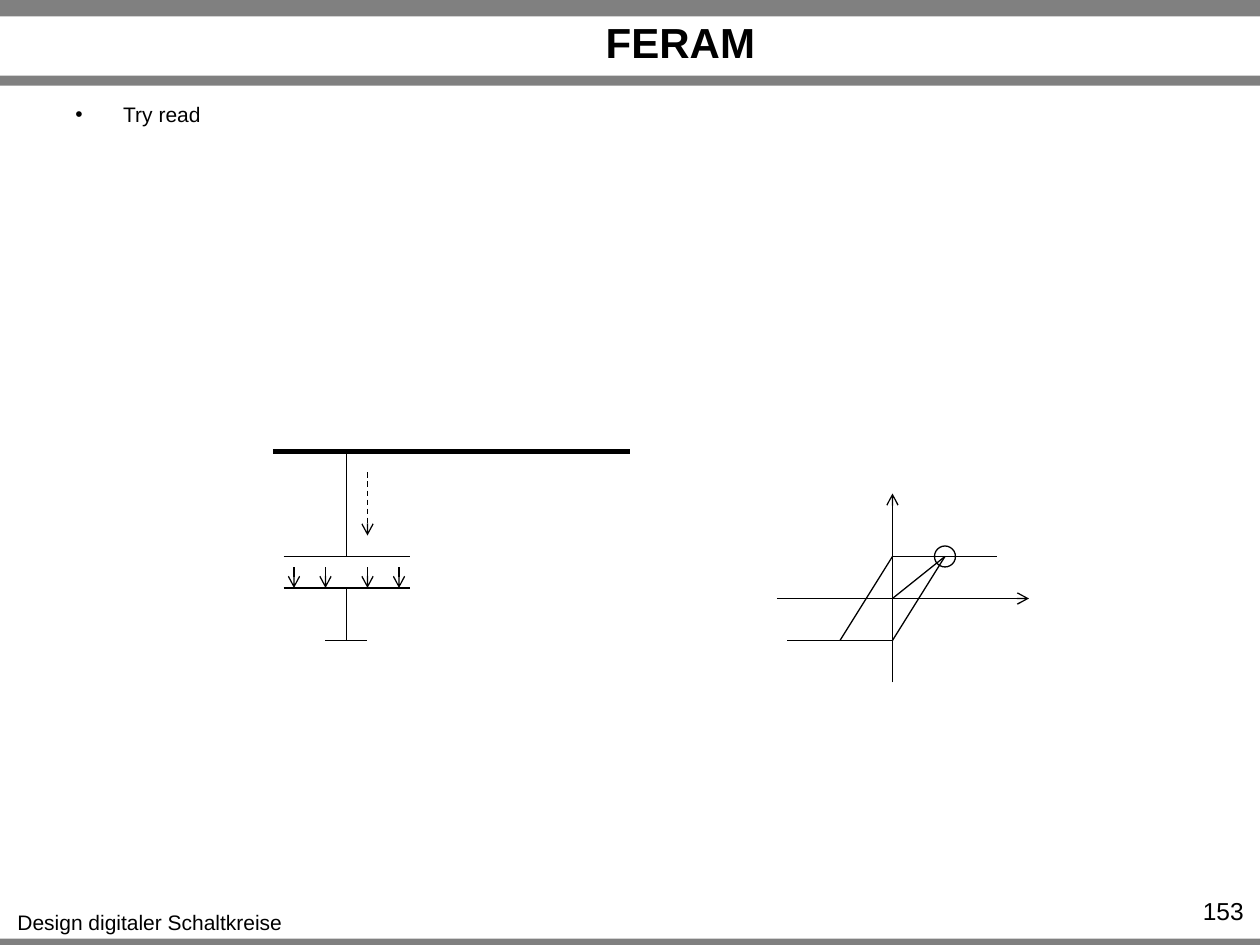
from lxml import etree
from pptx import Presentation
from pptx import util as u
from pptx.dml.color import RGBColor
from pptx.enum import dml, shapes, text
from pptx.oxml.ns import qn

COLORS = {"ink": "000000", "band": "808080"}
WIDTH, HEIGHT = 10, 7.5
CELL = 1 / 12  # grid step of both diagrams, in inches


def rgb(name):
    return RGBColor.from_string(COLORS[name])


def inches(*values):
    return [u.Inches(v) for v in values]


def write(sp, words, size, align, **font):
    """Fill a text shape with one formatted paragraph and return the paragraph."""
    p = sp.text_frame.paragraphs[0]
    p.alignment = align
    r = p.add_run()
    r.text = words
    r.font.color.rgb = rgb("ink")
    for name, value in {"name": "Arial", "size": u.Pt(size), **font}.items():
        setattr(r.font, name, value)
    return p


def add_text(s, box, words, size, align, wrap=True):
    sp = s.shapes.add_textbox(*inches(*box))
    sp.text_frame.word_wrap = wrap
    return write(sp, words, size, align)


def add_line(s, box, start, end, width=0.75, arrow=False, dashed=False):
    """Draw a line between two grid points counted from the box's corner."""
    left, top = box
    ends = [edge + n * CELL for point in (start, end) for edge, n in zip(box, point)]
    line = s.shapes.add_connector(shapes.MSO_CONNECTOR.STRAIGHT, *inches(*ends))
    line.line.color.rgb = rgb("ink")
    line.line.width = u.Pt(width)
    if dashed:
        line.line.dash_style = dml.MSO_LINE.DASH
    if arrow:
        etree.SubElement(line.line._get_or_add_ln(), qn("a:tailEnd"), type="arrow")
    etree.SubElement(line._element.spPr, qn("a:effectLst"))


def add_bands(s):
    for top, height in ((0, 0.13), (0.6, 0.08), (7.45, 0.05)):
        sp = s.shapes.add_shape(shapes.MSO_SHAPE.RECTANGLE, *inches(0, top, WIDTH, height))
        sp.shadow.inherit = False
        sp.fill.solid()
        sp.fill.fore_color.rgb = rgb("band")
        sp.line.fill.background()


def add_title(s, box, words):
    sp = s.shapes.title
    sp.left, sp.top, sp.width, sp.height = inches(*box)
    tf = sp.text_frame
    tf.auto_size = text.MSO_AUTO_SIZE.NONE
    tf.vertical_anchor = text.MSO_ANCHOR.MIDDLE
    write(sp, words, 24, text.PP_ALIGN.CENTER, bold=True)


def add_bullet(s, box, words):
    p = add_text(s, box, words, 12, text.PP_ALIGN.LEFT)
    pPr = p._p.get_or_add_pPr()
    indent = u.Inches(0.38)
    pPr.set("marL", str(indent))
    pPr.set("indent", str(-indent))
    etree.SubElement(pPr, qn("a:buFont"), typeface="Arial")
    etree.SubElement(pPr, qn("a:buChar"), char="•")


def add_footer(s, words, number):
    add_text(s, (0.03, 7.17, 2.32, 0.3), words, 12, text.PP_ALIGN.CENTER, wrap=False)
    add_text(s, (9.1, 7.06, 0.87, 0.24), number, 14, text.PP_ALIGN.RIGHT)


def add_capacitor(s, box):
    """Draw the storage cell hanging from its bit line down to ground."""
    mid, upper, lower, ground = 7, 10, 13, 18
    add_line(s, box, (0, 0), (34, 0), width=3)
    add_line(s, box, (mid, 0), (mid, upper))
    add_line(s, box, (mid, lower), (mid, ground))
    for y, half in ((upper, 6), (lower, 6), (ground, 2)):
        add_line(s, box, (mid - half, y), (mid + half, y))
    for offset in (-5, -2, 2, 5):
        add_line(s, box, (mid + offset, upper + 1), (mid + offset, lower), arrow=True)
    add_line(s, box, (mid + 2, 2), (mid + 2, 8), arrow=True, dashed=True)


def add_hysteresis(s, box):
    """Draw the axes, the loop and the marked operating point."""
    x0, y0 = 11, 10
    high, low, shift = y0 - 4, y0 + 4, 5
    point = (x0 + shift, high)
    add_line(s, box, (0, y0), (24, y0), arrow=True)
    add_line(s, box, (x0, 18), (x0, 0), arrow=True)
    for start, end in (
        ((x0, low), point),
        ((x0 - shift, low), (x0, high)),
        ((x0, high), (x0 + 10, high)),
        ((x0 - 10, low), (x0, low)),
        ((x0, y0), point),
    ):
        add_line(s, box, start, end)
    corner = [edge + (n - 1) * CELL for edge, n in zip(box, point)]
    ring = s.shapes.add_shape(
        shapes.MSO_SHAPE.OVAL, *inches(*corner, 2 * CELL, 2 * CELL))
    ring.shadow.inherit = False
    ring.fill.background()
    ring.line.color.rgb = rgb("ink")
    ring.line.width = u.Pt(0.75)


def main():
    prs = Presentation()
    prs.slide_width, prs.slide_height = inches(WIDTH, HEIGHT)
    s = prs.slides.add_slide(prs.slide_layouts[5])
    add_bands(s)
    add_title(s, (1.3, 0.14, 8.2, 0.38), "FERAM")
    add_bullet(s, (0.5, 0.76, 9, 0.66), "Try read")
    add_footer(s, "Design digitaler Schaltkreise", "153")
    add_capacitor(s, (26 * CELL, 43 * CELL))
    add_hysteresis(s, (74 * CELL, 47 * CELL))
    prs.save("out.pptx")


if __name__ == "__main__":
    main()
